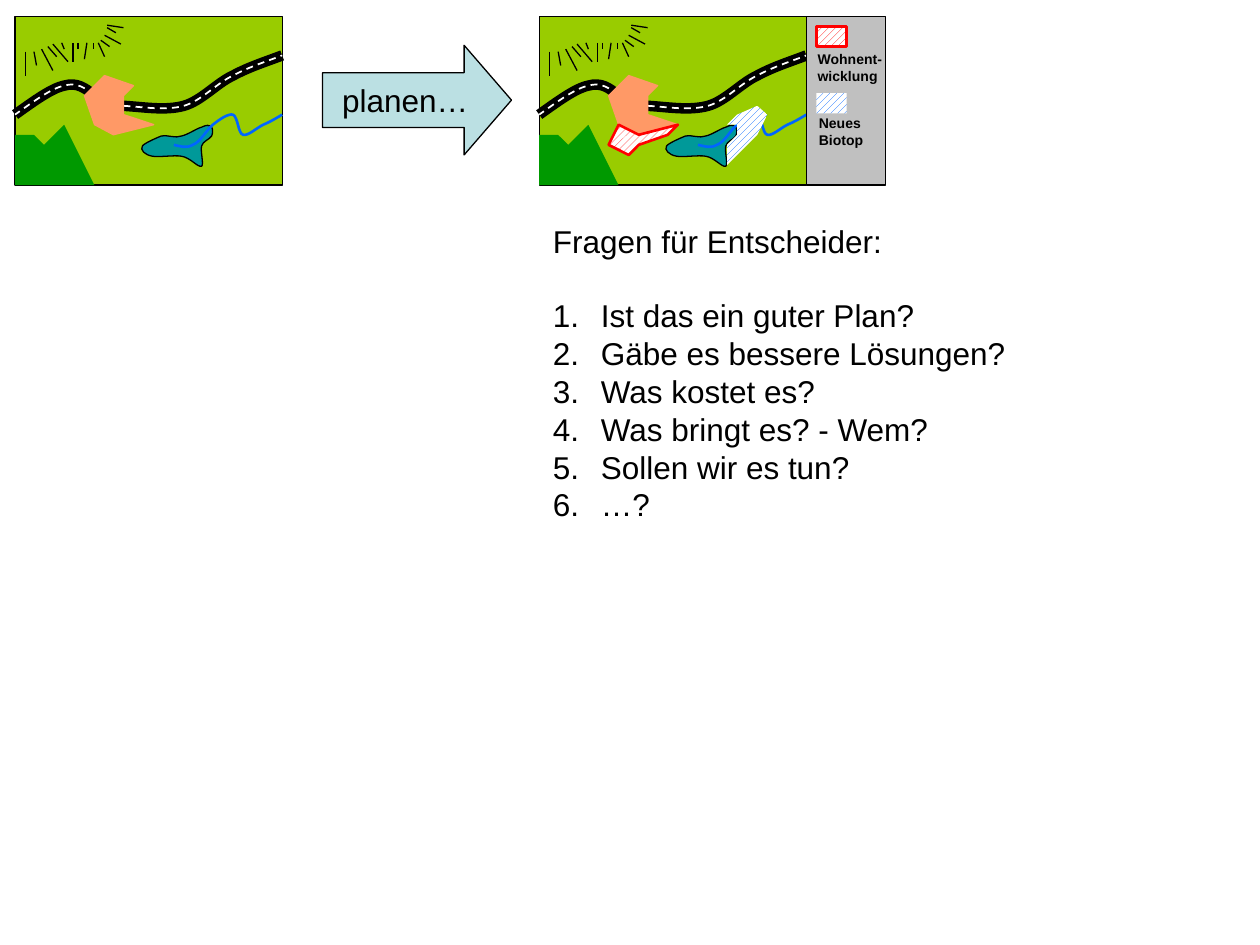
from dataclasses import dataclass

from lxml.etree import SubElement
from pptx import Presentation
from pptx.dml.color import RGBColor
from pptx.enum.dml import MSO_LINE, MSO_PATTERN
from pptx.enum.shapes import MSO_CONNECTOR as CONN, MSO_SHAPE as SHAPE
from pptx.enum.text import MSO_ANCHOR as ANCHOR, MSO_AUTO_SIZE as AUTO, PP_ALIGN as ALIGN
from pptx.oxml.ns import qn
from pptx.util import Inches, Pt


@dataclass(frozen=True)
class Theme:
    font: str = "Arial"
    body: float = 18
    label: float = 8
    thin: float = 0.75
    medium: float = 1.5
    road: float = 6
    black: str = "000000"
    white: str = "FFFFFF"
    meadow: str = "99CC00"
    town: str = "FF9966"
    lake: str = "009999"
    river: str = "0066FF"
    forest: str = "009900"
    housing: str = "FF0000"
    legend: str = "C0C0C0"
    arrow: str = "BBE0E3"


T = Theme()
PLAN_SHIFT = 4.16

# Map outlines; a curve is a start point followed by Bezier triples
ROAD_WEST = [(0.75, 0.76), (0.68, 0.7), (0.61, 0.65), (0.51, 0.68),
             (0.41, 0.7), (0.26, 0.81), (0.12, 0.91)]
ROAD_EAST = [(0.98, 0.84), (1.15, 0.85), (1.31, 0.88), (1.46, 0.84), (1.6, 0.8),
             (1.72, 0.66), (1.85, 0.6), (1.98, 0.53), (2.11, 0.49), (2.24, 0.44)]
TOWN = [(0.75, 0.99), (0.67, 0.76), (0.83, 0.6), (1.06, 0.68), (0.98, 0.76),
        (0.98, 0.91), (1.22, 0.99), (0.9, 1.07)]
LAKE = [(1.6, 1.01), (1.56, 1.02), (1.49, 1.07), (1.44, 1.08), (1.39, 1.1), (1.34, 1.07),
        (1.28, 1.08), (1.23, 1.1), (1.14, 1.14), (1.13, 1.16), (1.11, 1.19), (1.15, 1.23),
        (1.21, 1.24), (1.26, 1.25), (1.38, 1.23), (1.44, 1.24), (1.51, 1.25), (1.57, 1.33),
        (1.6, 1.32), (1.62, 1.31), (1.59, 1.2), (1.6, 1.16), (1.61, 1.12), (1.66, 1.11),
        (1.68, 1.08), (1.69, 1.06), (1.69, 1.02), (1.68, 1.01), (1.66, 0.99), (1.64, 0.99),
        (1.6, 1.01)]
RIVER = [(1.38, 1.15), (1.43, 1.16), (1.48, 1.18), (1.53, 1.15), (1.59, 1.13), (1.64, 1.03),
         (1.69, 0.99), (1.74, 0.95), (1.81, 0.9), (1.85, 0.91), (1.89, 0.93), (1.89, 1.06),
         (1.93, 1.07), (1.97, 1.08), (2.03, 1.02), (2.09, 0.99), (2.14, 0.97), (2.19, 0.94),
         (2.24, 0.91)]
FOREST = [(0.75, 1.47), (0.59, 1.15), (0.51, 0.99), (0.35, 1.15), (0.27, 1.07),
          (0.12, 1.07), (0.12, 1.47)]
SLOPE_MARKS = [(0.2, 0.41, 0.2, 0.6), (0.27, 0.41, 0.29, 0.52), (0.33, 0.39, 0.42, 0.56),
               (0.38, 0.37, 0.45, 0.45), (0.42, 0.35, 0.54, 0.49), (0.49, 0.34, 0.51, 0.39),
               (0.58, 0.34, 0.58, 0.49), (0.62, 0.34, 0.62, 0.39), (0.69, 0.34, 0.67, 0.47),
               (0.74, 0.34, 0.74, 0.39), (0.78, 0.34, 0.83, 0.45), (0.8, 0.32, 0.87, 0.37),
               (0.83, 0.28, 0.96, 0.35), (0.85, 0.22, 0.92, 0.26), (0.85, 0.2, 0.98, 0.22)]
HOUSING = [(5.38, 0.99), (5.3, 1.07), (5.07, 1.15), (4.99, 1.23), (4.83, 1.15),
           (4.91, 0.99), (5.07, 1.07)]
BIOTOPE = [(5.77, 1.31), (5.85, 1.23), (6.01, 1.07), (6.09, 0.91), (6.01, 0.84),
           (5.85, 0.91), (5.77, 0.99), (5.85, 0.99), (5.85, 1.07), (5.77, 1.15)]
QUESTIONS = ["Ist das ein guter Plan?", "Gäbe es bessere Lösungen?", "Was kostet es?",
             "Was bringt es? - Wem?", "Sollen wir es tun?", "…?"]


def rgb(color):
    return RGBColor.from_string(color)


def paint(sp, fill=None, line=None, width=T.thin, hatch=None, dash=None):
    sp.shadow.inherit = False
    if hatch:
        sp.fill.patterned()
        sp.fill.pattern = MSO_PATTERN.WIDE_UPWARD_DIAGONAL
        sp.fill.fore_color.rgb = rgb(hatch)
        sp.fill.back_color.rgb = rgb(T.white)
    elif fill:
        sp.fill.solid()
        sp.fill.fore_color.rgb = rgb(fill)
    else:
        sp.fill.background()
    if line:
        sp.line.color.rgb = rgb(line)
        sp.line.width = Pt(width)
        if dash:
            sp.line.dash_style = dash
    else:
        sp.line.fill.background()


def add_box(shapes, kind, box, **style):
    sp = shapes.add_shape(kind, *map(Inches, box))
    paint(sp, **style)
    return sp


def add_outline(shapes, points, dx=0, curved=False, closed=True, **style):
    pts = [(Inches(x + dx), Inches(y)) for x, y in points]
    builder = shapes.build_freeform(*pts[0])
    builder.add_line_segments(pts[1:], close=closed)
    sp = builder.convert_to_shape()
    if curved:
        # Every three line targets become one Bezier segment
        steps = list(sp._element.iter(qn("a:lnTo")))
        for i in range(0, len(steps) - 2, 3):
            bezier = steps[i].makeelement(qn("a:cubicBezTo"))
            steps[i].addprevious(bezier)
            for step in steps[i:i + 3]:
                bezier.append(step[0])
                step.getparent().remove(step)
    paint(sp, **style)


def add_line(shapes, x1, y1, x2, y2):
    line = shapes.add_connector(CONN.STRAIGHT, *map(Inches, (x1, y1, x2, y2)))
    line.line.color.rgb = rgb(T.black)
    line.line.width = Pt(T.thin)
    SubElement(line._element.spPr, qn("a:effectLst"))


def add_run(p, text, size, bold=False):
    r = p.add_run()
    r.text = text
    r.font.name = T.font
    r.font.size = Pt(size)
    r.font.bold = bold
    r.font.color.rgb = rgb(T.black)


def add_text(shapes, box, lines, size, bold=False, wrap=False):
    tf = shapes.add_textbox(*map(Inches, box)).text_frame
    tf.word_wrap = wrap
    tf.auto_size = AUTO.SHAPE_TO_FIT_TEXT
    for i, text in enumerate(lines):
        p = tf.add_paragraph() if i else tf.paragraphs[0]
        add_run(p, text, size, bold)
    return tf


def number(p):
    pPr = p._p.get_or_add_pPr()
    pPr.set("marL", str(Inches(0.38)))
    pPr.set("indent", str(Inches(-0.38)))
    SubElement(pPr, qn("a:buFont"), typeface="+mj-lt")
    SubElement(pPr, qn("a:buAutoNum"), type="arabicPeriod")


def add_map(slide, dx=0):
    shapes = slide.shapes.add_group_shape().shapes
    add_box(shapes, SHAPE.RECTANGLE, (0.12 + dx, 0.13, 2.12, 1.34), fill=T.meadow, line=T.black)
    # Roads: black bed, then dashed centre line
    for color, width, dash in ((T.black, T.road, None), (T.white, 1, MSO_LINE.DASH)):
        for road in (ROAD_WEST, ROAD_EAST):
            add_outline(shapes, road, dx, True, False, line=color, width=width, dash=dash)
    # Town, water and forest
    add_outline(shapes, TOWN, dx, fill=T.town, line=T.town)
    add_outline(shapes, LAKE, dx, True, fill=T.lake, line=T.black)
    add_outline(shapes, RIVER, dx, True, False, line=T.river, width=T.medium)
    add_outline(shapes, FOREST, dx, fill=T.forest)
    for x1, y1, x2, y2 in SLOPE_MARKS:
        add_line(shapes, x1 + dx, y1, x2 + dx, y2)
    return shapes


def add_legend(shapes, housing):
    add_box(shapes, SHAPE.RECTANGLE, (6.4, 0.13, 0.63, 1.34), fill=T.legend, line=T.black)
    add_box(shapes, SHAPE.RECTANGLE, (6.48, 0.21, 0.24, 0.16), **housing)
    add_box(shapes, SHAPE.RECTANGLE, (6.48, 0.74, 0.24, 0.16), hatch=T.river)
    add_text(shapes, (6.39, 0.35, 0.71, 0.37), ["Wohnent-", "wicklung"], T.label, True)
    add_text(shapes, (6.4, 0.86, 0.55, 0.37), ["Neues", "Biotop"], T.label, True)


def add_arrow(shapes):
    sp = add_box(shapes, SHAPE.RIGHT_ARROW, (2.56, 0.36, 1.5, 0.87), fill=T.arrow, line=T.black)
    sp.adjustments[0], sp.adjustments[1] = 0.5, 0.432
    tf = sp.text_frame
    tf.word_wrap = False
    tf.vertical_anchor = ANCHOR.MIDDLE
    p = tf.paragraphs[0]
    p.alignment = ALIGN.CENTER
    add_run(p, "planen…", T.body)


def add_questions(shapes):
    lines = ["Fragen für Entscheider:"] + QUESTIONS
    tf = add_text(shapes, (4.29, 1.71, 3.85, 2.5), lines, T.body, wrap=True)
    heading, *items = tf.paragraphs
    heading.space_after = Pt(21.2)
    for p in items:
        number(p)


def main():
    prs = Presentation()
    prs.slide_width, prs.slide_height = Inches(10), Inches(7.5)
    slide = prs.slides.add_slide(prs.slide_layouts[6])
    # Present state, then the plan with its new areas
    add_map(slide)
    plan = add_map(slide, PLAN_SHIFT)
    housing = dict(hatch=T.housing, line=T.housing, width=T.medium)
    add_outline(plan, HOUSING, **housing)
    add_outline(slide.shapes, BIOTOPE, hatch=T.river)
    add_legend(slide.shapes, housing)
    add_arrow(slide.shapes)
    add_questions(slide.shapes)
    prs.save("out.pptx")


main()
